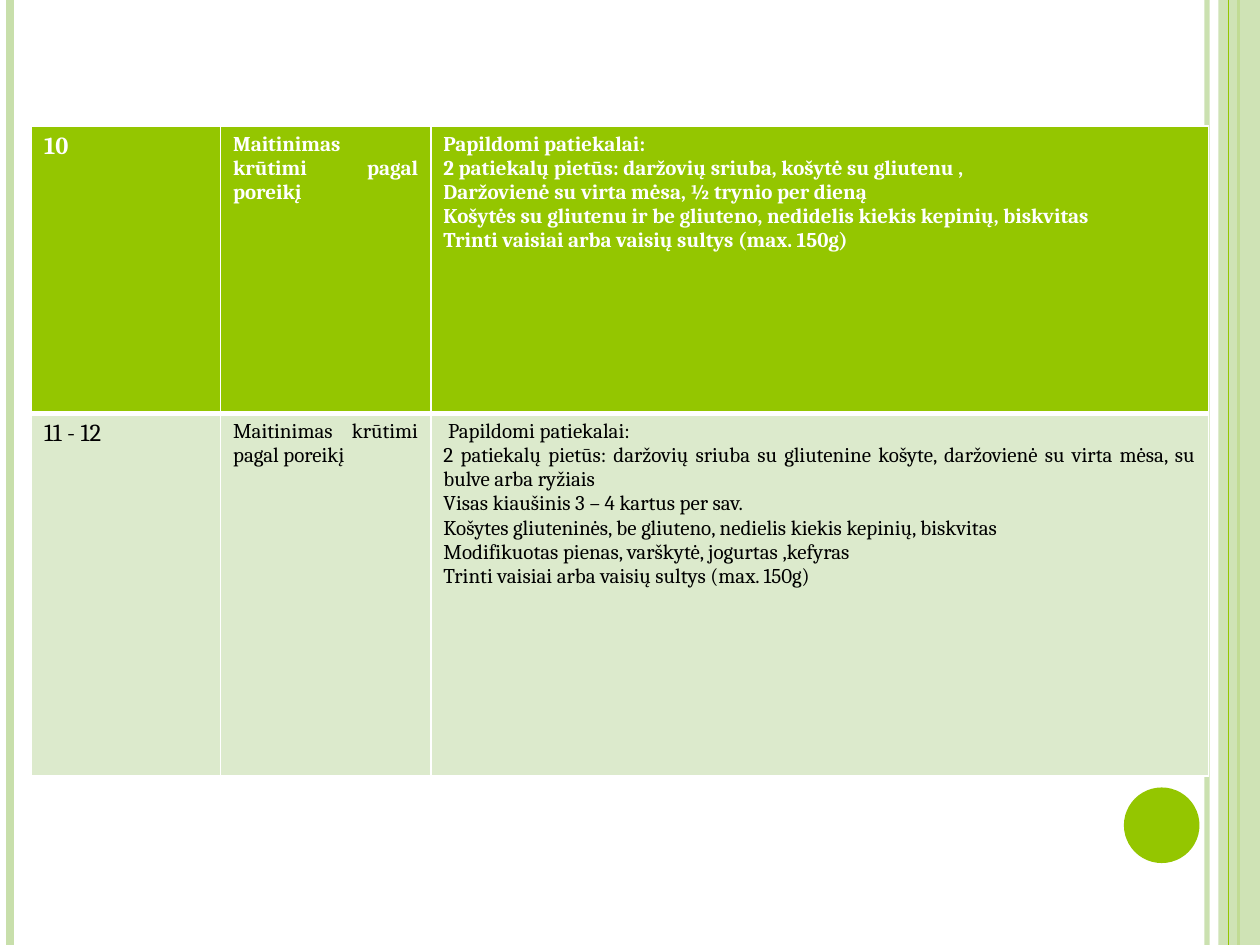
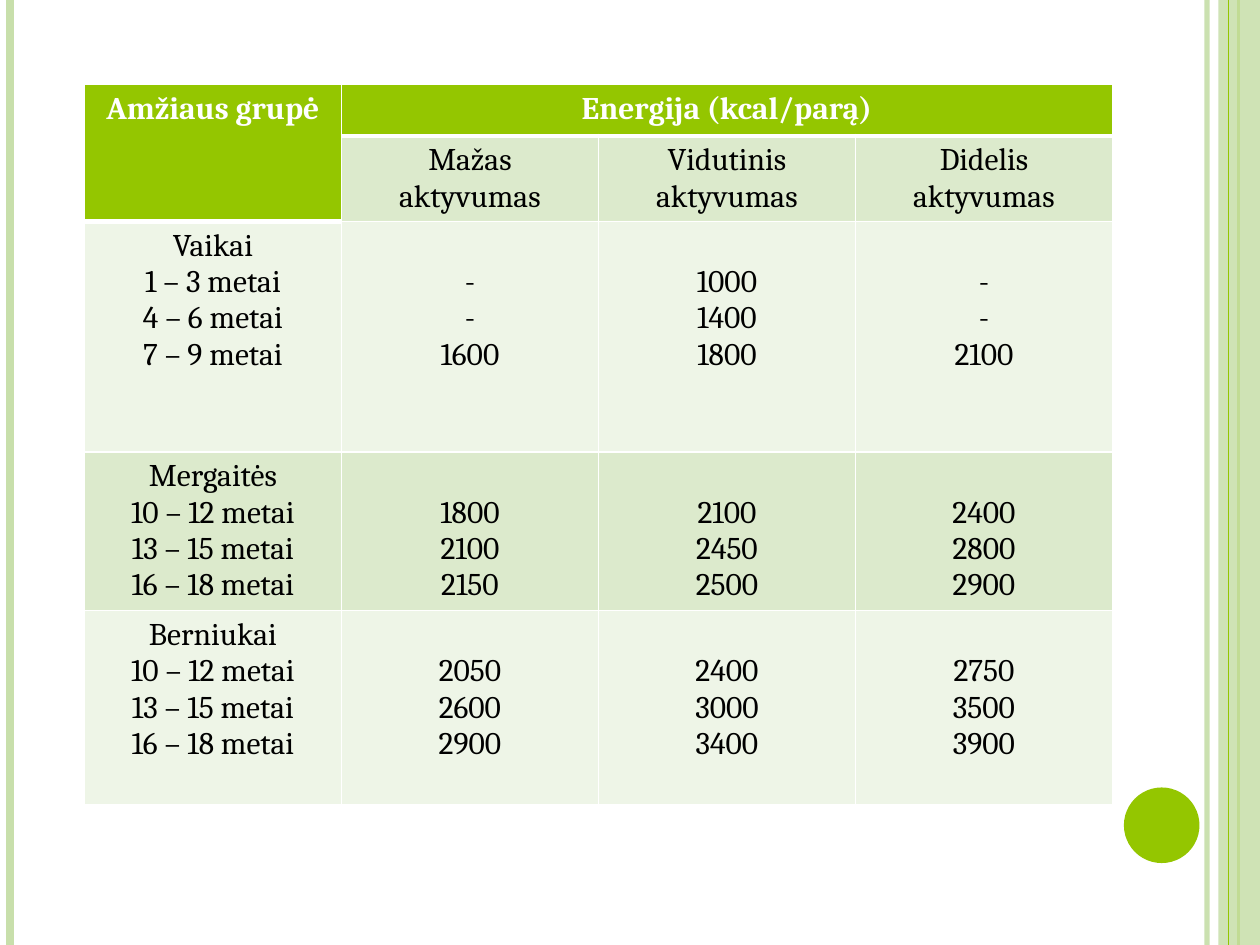
from lxml import etree
from pptx import Presentation
from pptx.dml.color import RGBColor
from pptx.enum.shapes import MSO_CONNECTOR, MSO_SHAPE
from pptx.enum.text import PP_ALIGN
from pptx.oxml.ns import qn
from pptx.util import Inches, Pt

STRAIGHT = MSO_CONNECTOR.STRAIGHT
RECTANGLE, OVAL = MSO_SHAPE.RECTANGLE, MSO_SHAPE.OVAL
CENTER, JUSTIFY = PP_ALIGN.CENTER, PP_ALIGN.JUSTIFY

COLORS = {
    "green": "94C600",
    "pale": "C8DFAB",
    "band_dark": "DCEACC",
    "band_light": "EEF5E7",
    "white": "FFFFFF",
    "black": "000000",
}
FONT = "Cambria"
SLIDE_W, SLIDE_H = 10, 7.5
LINE_HEIGHT = 0.29  # one line of 18 pt text, in inches


def rgb(name):
    return RGBColor.from_string(COLORS[name])


def write(frame, lines, size=18, color="black", bold=False, align=CENTER):
    """Put each line in its own paragraph, all in the same format."""
    frame.word_wrap = True
    for i, line in enumerate(lines):
        paragraph = frame.paragraphs[0] if i == 0 else frame.add_paragraph()
        paragraph.alignment = align
        run = paragraph.add_run()
        run.text = line
        run.font.name, run.font.size, run.font.bold = FONT, Pt(size), bold
        run.font.color.rgb = rgb(color)


def set_alpha(shape, percent):
    for color in shape._element.spPr.iter(qn("a:srgbClr")):
        etree.SubElement(color, qn("a:alpha"), val=str(percent * 1000))


def set_borders(cell, top, bottom):
    """White cell borders; the lines must come before the fill."""
    properties = cell._tc.get_or_add_tcPr()
    widths = {"lnL": 1, "lnR": 1, "lnT": top, "lnB": bottom}
    for i, (side, width) in enumerate(widths.items()):
        border = etree.Element(qn(f"a:{side}"), w=str(Pt(width)))
        fill = etree.SubElement(border, qn("a:solidFill"))
        etree.SubElement(fill, qn("a:srgbClr"), val=COLORS["white"])
        properties.insert(i, border)


class Deck:
    def __init__(self):
        self.prs = Presentation()
        self.prs.slide_width, self.prs.slide_height = Inches(SLIDE_W), Inches(SLIDE_H)
        self.slide = None

    def new_slide(self):
        self.slide = self.prs.slides.add_slide(self.prs.slide_layouts[6])
        self.stripe(9.58, "pale", 3, alpha=93)
        self.stripe(0.08, "pale", 4.5)
        self.stripe(9.83, "green", 1.5)
        self.shape(RECTANGLE, 9.67, 0, 0.33, SLIDE_H, "pale", alpha=87)
        self.stripe(9.75, "green", 0.75)
        self.shape(OVAL, 8.92, 6.25, 0.6, 0.6, "green")

    def stripe(self, x, color, width, alpha=100):
        stripe = self.slide.shapes.add_connector(
            STRAIGHT, Inches(x), 0, Inches(x), Inches(SLIDE_H))
        stripe.line.color.rgb = rgb(color)
        stripe.line.width = Pt(width)
        etree.SubElement(stripe._element.spPr, qn("a:effectLst"))
        if alpha < 100:
            set_alpha(stripe, alpha)

    def shape(self, preset, x, y, w, h, color, alpha=100):
        shape = self.slide.shapes.add_shape(
            preset, Inches(x), Inches(y), Inches(w), Inches(h))
        shape.shadow.inherit = False
        shape.fill.solid()
        shape.fill.fore_color.rgb = rgb(color)
        shape.line.fill.background()
        if alpha < 100:
            set_alpha(shape, alpha)

    def table(self, x, y, widths, heights, headers):
        """Add a banded table; headers holds the (row, column) of header cells."""
        table = self.slide.shapes.add_table(
            len(heights), len(widths), Inches(x), Inches(y),
            Inches(sum(widths)), Inches(sum(heights))).table
        for column, width in zip(table.columns, widths):
            column.width = Inches(width)
        for r, height in enumerate(heights):
            table.rows[r].height = Inches(height)
            for c in range(len(widths)):
                cell = table.cell(r, c)
                band = "band_dark" if r % 2 else "band_light"
                is_header = (r, c) in headers
                cell.fill.solid()
                cell.fill.fore_color.rgb = rgb("green" if is_header else band)
                set_borders(cell, top=3 if (r - 1, c) in headers else 1,
                            bottom=3 if is_header else 1)
        return table


def feeding_slide(deck):
    deck.new_slide()
    breastfeeding = ["Maitinimas krūtimi pagal poreikį"]
    fruit = "Trinti vaisiai arba vaisių sultys (max. 150g)"
    months = [
        (["10"], breastfeeding, [
            "Papildomi patiekalai:",
            "2 patiekalų pietūs: daržovių sriuba, košytė su gliutenu ,",
            "Daržovienė su virta mėsa, ½ trynio per dieną",
            "Košytės su gliutenu ir be gliuteno, nedidelis kiekis kepinių, biskvitas",
            fruit]),
        (["11 - 12"], breastfeeding, [
            " Papildomi patiekalai:",
            "2 patiekalų pietūs: daržovių sriuba su gliutenine košyte, "
            "daržovienė su virta mėsa, su bulve arba ryžiais",
            "Visas kiaušinis 3 – 4 kartus per sav.",
            "Košytes gliuteninės, be gliuteno, nedielis kiekis kepinių, biskvitas",
            "Modifikuotas pienas, varškytė, jogurtas ,kefyras",
            fruit]),
    ]
    menu = deck.table(0.25, 1, [1.5, 1.67, 6.17], [2.28, 2.88],
                      headers={(0, c) for c in range(3)})
    for r, month in enumerate(months):
        for c, lines in enumerate(month):
            write(menu.cell(r, c).text_frame, lines, size=12 if c else 14,
                  color="black" if r else "white", bold=r == 0, align=JUSTIFY)


def energy_slide(deck):
    deck.new_slide()
    energy = deck.table(0.67, 0.67, [2.04] * 4, [0.41, 0.67, 1.83, 1.26, 1.54],
                        headers={(0, c) for c in range(4)} | {(1, 0)})

    # Header cells
    energy.cell(0, 0).merge(energy.cell(1, 0))
    energy.cell(0, 1).merge(energy.cell(0, 3))
    for c, heading in enumerate(["Amžiaus grupė", "Energija (kcal/parą)"]):
        write(energy.cell(0, c).text_frame, [heading], color="white", bold=True)
    for c, level in enumerate(["Mažas", "Vidutinis", "Didelis"], start=1):
        write(energy.cell(1, c).text_frame, [f"{level} aktyvumas"])

    # Age groups with values for low, medium and high activity
    teen_ages = ["10 – 12", "13 – 15", "16 – 18"]
    groups = [
        ("Vaikai", ["1 – 3", "4 – 6", "7 – 9"],
         ["- - 1600", "1000 1400 1800", "- - 2100"]),
        ("Mergaitės", teen_ages,
         ["1800 2100 2150", "2100 2450 2500", "2400 2800 2900"]),
        ("Berniukai", teen_ages,
         ["2050 2600 2900", "2400 3000 3400", "2750 3500 3900"]),
    ]
    for r, (group, ages, activity_values) in enumerate(groups, start=2):
        write(energy.cell(r, 0).text_frame, [group] + [f"{age} metai" for age in ages])
        for c, values in enumerate(activity_values, start=1):
            cell = energy.cell(r, c)
            cell.margin_top = Inches(0.05 + LINE_HEIGHT)  # level with the ages
            write(cell.text_frame, values.split())


def main():
    deck = Deck()
    feeding_slide(deck)
    energy_slide(deck)
    deck.prs.save("out.pptx")


if __name__ == "__main__":
    main()
